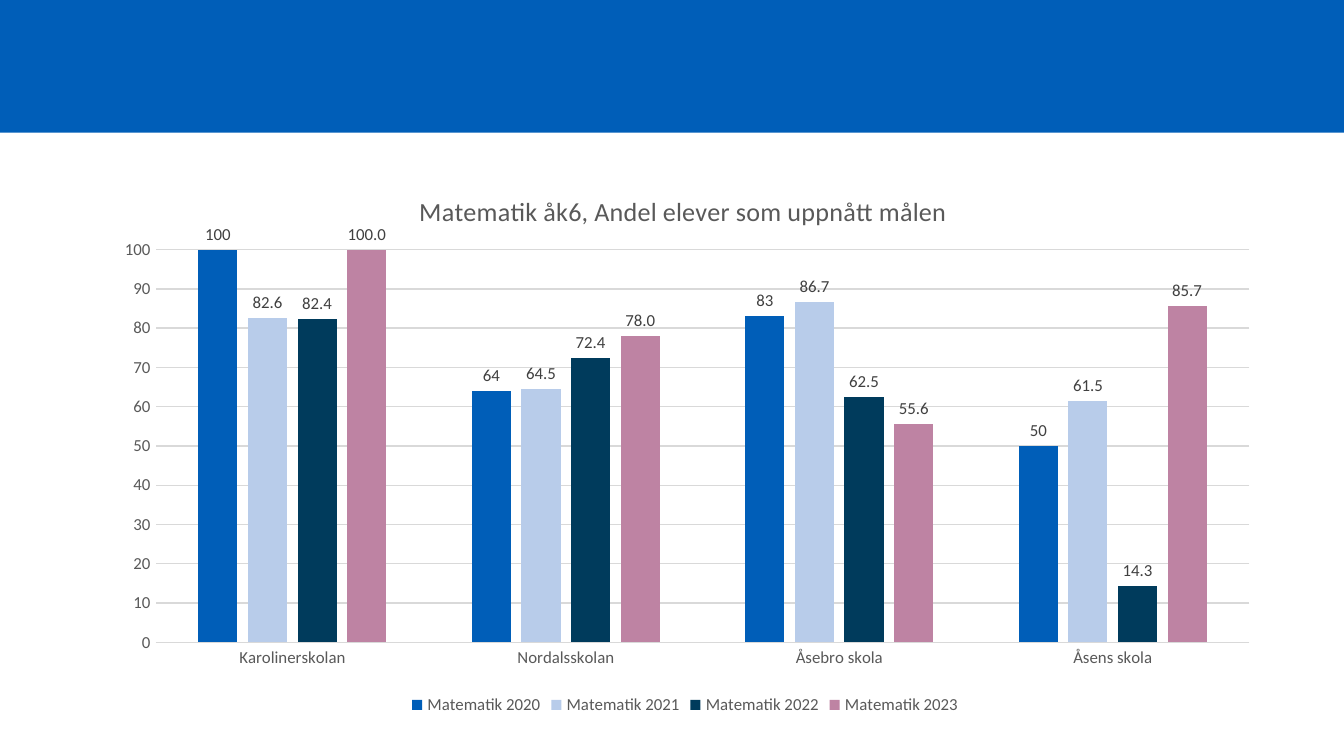
from lxml import etree
from pptx import Presentation
from pptx import util as u
from pptx.chart import data as chart_data
from pptx.dml import color as c
from pptx.enum import chart as ch, shapes
from pptx.oxml import ns

FONT = "Calibri"
COLORS = {
    "banner": "005EB8",
    "text": "595959",
    "label": "404040",
    "grid": "D9D9D9",
}


def write(item, text=None, size=9, color="text"):
    if text is not None:
        item.text = text
    item.font.name = FONT
    item.font.size = u.Pt(size)
    item.font.bold = False
    item.font.color.rgb = c.RGBColor.from_string(COLORS[color])


def place(parent, index, **fractions):
    for old in parent.findall(ns.qn("c:layout")):
        parent.remove(old)
    layout = etree.Element(ns.qn("c:layout"))
    manual = etree.SubElement(layout, ns.qn("c:manualLayout"))
    if "w" in fractions:
        etree.SubElement(manual, ns.qn("c:layoutTarget"), val="inner")
    for side in ("x", "y"):
        etree.SubElement(manual, ns.qn(f"c:{side}Mode"), val="edge")
    for name, value in fractions.items():
        etree.SubElement(manual, ns.qn(f"c:{name}"), val=str(value))
    parent.insert(index, layout)


deck = Presentation()
deck.slide_width, deck.slide_height = u.Cm(25.4), u.Cm(14.29)
page = deck.slides.add_slide(deck.slide_layouts[6])

banner = page.shapes.add_shape(
    shapes.MSO_SHAPE.RECTANGLE, 0, 0, deck.slide_width, u.Cm(2.51))
banner.shadow.inherit = False
banner.fill.solid()
banner.fill.fore_color.rgb = c.RGBColor.from_string(COLORS["banner"])
banner.line.fill.background()

results = [
    ("Matematik 2020", "005EB8", (100, 64, 83, 50), "General"),
    ("Matematik 2021", "B8CCEA", (82.6, 64.5, 86.7, 61.5), "General"),
    ("Matematik 2022", "003B5C", (82.4, 72.4, 62.5, 14.3), "General"),
    ("Matematik 2023", "BE83A3", (100, 78, 55.6, 85.7), "0.0"),
]
scores = chart_data.CategoryChartData()
scores.categories = ["Karolinerskolan", "Nordalsskolan", "Åsebro skola", "Åsens skola"]
for name, fill, values, number_format in results:
    scores.add_series(name, values, number_format)

chart = page.shapes.add_chart(
    ch.XL_CHART_TYPE.COLUMN_CLUSTERED,
    u.Cm(1.83), u.Cm(3.15), u.Cm(22.23), u.Cm(10.46), scores).chart
chart.font.name = FONT
chart.font.size = u.Pt(10)

chart.has_title = True
title = chart.chart_title
para = title.text_frame.paragraphs[0]
write(para.add_run(), "Matematik åk6, Andel elever som uppnått målen", size=14)
title.include_in_layout = False
title_xml = chart.element.find(".//" + ns.qn("c:title"))
place(title_xml, 1, x=0.27, y=0.04)
plot_xml = chart.element.find(".//" + ns.qn("c:plotArea"))
place(plot_xml, 0, x=0.05, y=0.15, w=0.93, h=0.71)

chart.has_legend = True
chart.legend.position = ch.XL_LEGEND_POSITION.BOTTOM
chart.legend.include_in_layout = False
write(chart.legend)

for axis in (chart.category_axis, chart.value_axis):
    axis.major_tick_mark = axis.minor_tick_mark = ch.XL_TICK_MARK.NONE
    write(axis.tick_labels)
chart.value_axis.minimum_scale = 0
chart.value_axis.maximum_scale = 100
chart.value_axis.major_unit = 10
chart.value_axis.has_major_gridlines = True
chart.value_axis.format.line.fill.background()
for line in (chart.category_axis.format.line,
             chart.value_axis.major_gridlines.format.line):
    line.color.rgb = c.RGBColor.from_string(COLORS["grid"])
    line.width = u.Pt(0.75)

plot = chart.plots[0]
plot.vary_by_categories = False
plot.gap_width = 219
plot.overlap = -27
for series, (name, fill, values, number_format) in zip(plot.series, results):
    series.format.fill.solid()
    series.format.fill.fore_color.rgb = c.RGBColor.from_string(fill)
    series.invert_if_negative = False
    labels = series.data_labels
    labels.show_value = True
    labels.position = ch.XL_LABEL_POSITION.OUTSIDE_END
    labels.number_format = number_format
    labels.number_format_is_linked = False
    write(labels, color="label")

deck.save("out.pptx")
